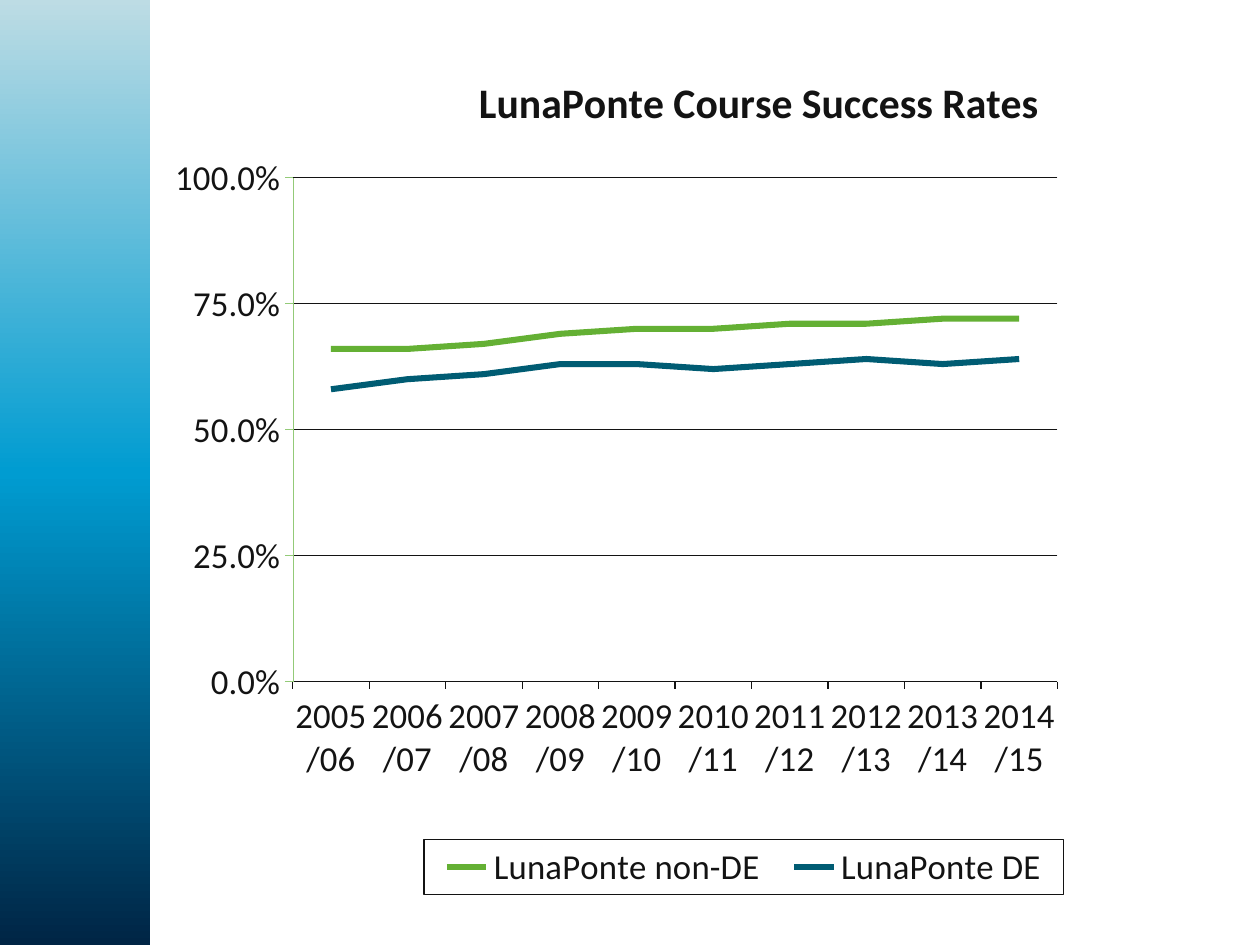
from copy import deepcopy

from lxml.etree import SubElement
from pptx import Presentation
from pptx.chart.data import CategoryChartData
from pptx.dml.color import RGBColor
from pptx.enum.chart import XL_CHART_TYPE, XL_LEGEND_POSITION, XL_MARKER_STYLE, XL_TICK_MARK
from pptx.enum.shapes import MSO_SHAPE
from pptx.oxml import parse_xml
from pptx.oxml.ns import nsdecls, qn
from pptx.util import Inches, Pt

TITLE = "LunaPonte Course Success Rates"
YEARS = [f"{year}/{year % 100 + 1:02d}" for year in range(2005, 2015)]
RATES = [
    ("LunaPonte non-DE", "green", [0.66, 0.66, 0.67, 0.69, 0.7, 0.7, 0.71, 0.71, 0.72, 0.72]),
    ("LunaPonte DE", "teal", [0.58, 0.6, 0.61, 0.63, 0.63, 0.62, 0.63, 0.64, 0.63, 0.64]),
]
COLORS = {"ink": "131313", "green": "64B034", "teal": "005C73", "navy": "002545",
          "blue": "009CD1", "mist": "BDDCE4", "axis": "93CA78"}
BAND_STOPS = [(0, "navy"), (0.5, "blue"), (1, "mist")]
CHART_AREA = (1.39, 0.34, 8.61, 6.84)
TITLE_PLACE = (3.69, 0.53)
PLOT_PLACE = (2.26, 1.41, 6.12, 4)
LEGEND_PLACE = (3.31, 6.66, 5.12, 0.44)


def color(name):
    """Return the named colour."""
    return RGBColor.from_string(COLORS[name])


def style_line(line, name, width=0.75):
    """Give a line its colour and width."""
    line.color.rgb = color(name)
    line.width = Pt(width)


def style_font(font, size, bold=False):
    """Set the shared chart font at one size."""
    font.name, font.size, font.bold = "Calibri", Pt(size), bold
    font.color.rgb = color("ink")


def place(element, area, after=None, inner=False):
    """Put a chart part at a place given in slide inches."""
    for old in element.findall(qn("c:layout")):
        element.remove(old)
    layout = parse_xml(f"<c:layout {nsdecls('c')}><c:manualLayout/></c:layout>")
    left, top, width, height = CHART_AREA
    shares = [(area[0] - left) / width, (area[1] - top) / height]
    shares += [length / whole for length, whole in zip(area[2:], (width, height))]
    settings = [("layoutTarget", "inner")] if inner else []
    settings += [("xMode", "edge"), ("yMode", "edge")]
    settings += [(key, f"{share:.4f}") for key, share in zip("xywh", shares)]
    for key, value in settings:
        SubElement(layout[0], qn(f"c:{key}")).set("val", value)
    if after:
        element.find(qn(after)).addnext(layout)
    else:
        element.insert(0, layout)


def add_band(page):
    """Draw the gradient band at the left edge."""
    band = page.shapes.add_shape(MSO_SHAPE.RECTANGLE, 0, 0, Inches(1.19), Inches(7.5))
    band.shadow.inherit = False
    band.line.fill.background()
    band.fill.gradient()
    band.fill.gradient_angle = 90
    stops = band._element.spPr.find(qn("a:gradFill")).find(qn("a:gsLst"))
    stops.append(deepcopy(stops[0]))
    for stop, (position, name) in zip(band.fill.gradient_stops, BAND_STOPS):
        stop.position = position
        stop.color.rgb = color(name)


def add_rates_chart(page):
    """Draw the line chart of success rates."""
    data = CategoryChartData(number_format="0.0%")
    data.categories = YEARS
    for name, _, values in RATES:
        data.add_series(name, values)
    chart = page.shapes.add_chart(XL_CHART_TYPE.LINE, *map(Inches, CHART_AREA), data).chart
    style_font(chart.font, 10)
    chart.plots[0].vary_by_categories = False
    for series, (_, name, _) in zip(chart.plots[0].series, RATES):
        series.smooth = False
        series.marker.style = XL_MARKER_STYLE.NONE
        style_line(series.format.line, name, 3.5)

    chart.has_title = True
    heading = chart.chart_title.text_frame
    heading.text = TITLE
    style_font(heading.paragraphs[0].font, 24, True)

    for axis, line_color, width in ((chart.category_axis, "ink", 0.75),
                                    (chart.value_axis, "axis", 0.25)):
        style_font(axis.tick_labels.font, 20)
        axis.major_tick_mark = XL_TICK_MARK.OUTSIDE
        axis.minor_tick_mark = XL_TICK_MARK.NONE
        style_line(axis.format.line, line_color, width)
    scale = chart.value_axis
    scale.minimum_scale, scale.maximum_scale, scale.major_unit = 0, 1, 0.25
    scale.tick_labels.number_format = "0.0%"
    scale.tick_labels.number_format_is_linked = False
    scale.has_major_gridlines = True
    style_line(scale.major_gridlines.format.line, "ink")

    chart.has_legend = True
    legend = chart.legend
    legend.position = XL_LEGEND_POSITION.BOTTOM
    legend.include_in_layout = False
    style_font(legend.font, 20)
    border = parse_xml(
        f'<c:spPr {nsdecls("c", "a")}><a:ln w="9525"><a:solidFill>'
        f'<a:srgbClr val="{COLORS["ink"]}"/></a:solidFill></a:ln></c:spPr>')
    legend._element.find(qn("c:txPr")).addprevious(border)

    place(chart.chart_title._element, TITLE_PLACE, after="c:tx")
    place(legend._element, LEGEND_PLACE, after="c:legendPos")
    place(chart._chartSpace.chart.plotArea, PLOT_PLACE, inner=True)


def main():
    """Build the slide and save it."""
    deck = Presentation()
    deck.slide_width, deck.slide_height = Inches(10), Inches(7.5)
    page = deck.slides.add_slide(deck.slide_layouts[6])
    add_band(page)
    add_rates_chart(page)
    deck.save("out.pptx")


if __name__ == "__main__":
    main()
